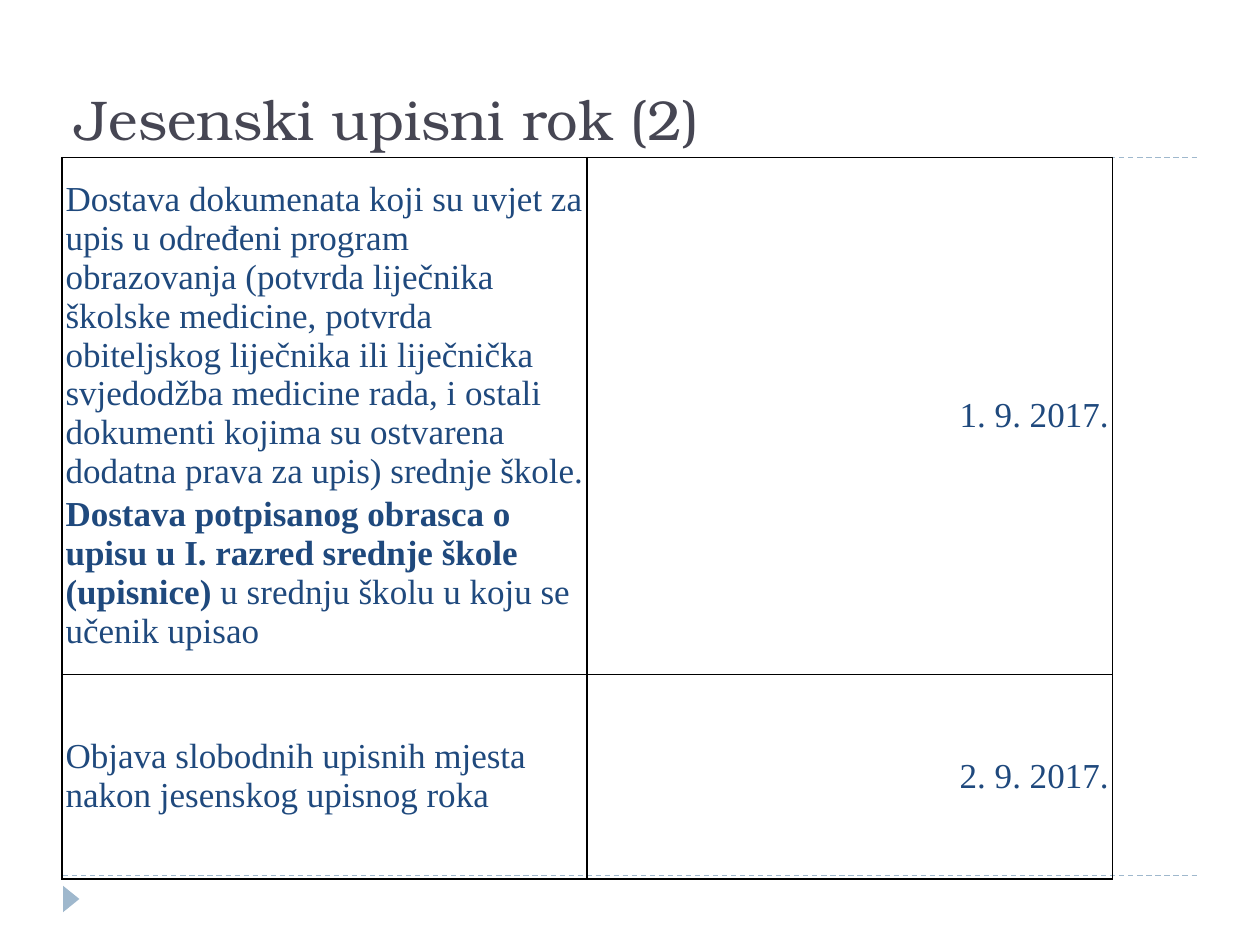
from pptx import Presentation
from pptx.dml.color import RGBColor
from pptx.enum.dml import MSO_LINE
from pptx.enum.shapes import MSO_CONNECTOR, MSO_SHAPE
from pptx.enum.text import MSO_ANCHOR, PP_ALIGN
from pptx.oxml import parse_xml
from pptx.oxml.ns import nsdecls
from pptx.oxml.xmlchemy import OxmlElement
from pptx.util import Inches, Pt

STRAIGHT = MSO_CONNECTOR.STRAIGHT
TRIANGLE = MSO_SHAPE.ISOSCELES_TRIANGLE
DASH = MSO_LINE.DASH
BOTTOM, MIDDLE = MSO_ANCHOR.BOTTOM, MSO_ANCHOR.MIDDLE
LEFT, RIGHT = PP_ALIGN.LEFT, PP_ALIGN.RIGHT

ACCENT = "9FB8CD"
TITLE_FORMAT = {"name": "TeX Gyre Bonum", "size": Pt(32), "bold": False}
TITLE_COLOR = "464653"
BODY_FORMAT = {"name": "Times New Roman", "size": Pt(20)}
BODY_COLOR = "1F497D"
CELL_FORMAT = {
    "vertical_anchor": MIDDLE,
    "margin_left": Inches(0.03),
    "margin_top": Inches(0.03),
    "margin_bottom": Inches(0.04),
}
# Alignment and right margin of each column; the text column needs the full width
COLUMN_FORMATS = ((LEFT, Inches(0.01)), (RIGHT, Inches(0.03)))


def color(hex_text):
    return RGBColor.from_string(hex_text)


def add_run(paragraph, text, run_format, hex_text):
    run = paragraph.add_run()
    run.text = text
    for name, value in run_format.items():
        setattr(run.font, name, value)
    run.font.color.rgb = color(hex_text)


presentation = Presentation()
presentation.slide_width = Inches(10)
presentation.slide_height = Inches(7.5)
slide = presentation.slides.add_slide(presentation.slide_layouts[6])

# Dashed rules and corner marker
for y in (6.95, 1.25):
    rule = slide.shapes.add_connector(
        STRAIGHT, Inches(0.5), Inches(y), Inches(9.5), Inches(y))
    rule.line.color.rgb = color(ACCENT)
    rule.line.width = Pt(0.75)
    rule.line.dash_style = DASH
    rule._element.spPr.append(OxmlElement("a:effectLst"))

marker = slide.shapes.add_shape(
    TRIANGLE, Inches(0.46), Inches(7.07), Inches(0.21), Inches(0.13))
marker.rotation = 90
marker.shadow.inherit = False
marker.fill.solid()
marker.fill.fore_color.rgb = color(ACCENT)
marker.line.fill.background()

# Title
title = slide.shapes.add_textbox(Inches(0.5), Inches(0.17), Inches(9), Inches(1.08))
title.text_frame.word_wrap = True
title.text_frame.vertical_anchor = BOTTOM
add_run(title.text_frame.paragraphs[0], "Jesenski upisni rok (2)",
        TITLE_FORMAT, TITLE_COLOR)

# Deadlines: each cell lists paragraphs, each paragraph lists (text, bold) runs
deadlines = [
    ([[("Dostava dokumenata koji su uvjet za upis u određeni program obrazovanja "
        "(potvrda liječnika školske medicine, potvrda obiteljskog liječnika ili "
        "liječnička svjedodžba medicine rada, i ostali dokumenti kojima su "
        "ostvarena dodatna prava za upis) srednje škole.", False)],
      [("Dostava potpisanog obrasca o upisu u I. razred srednje škole (upisnice) ", True),
       ("u srednju školu u koju se učenik upisao", False)]],
     [[("1. 9. 2017.", False)]]),
    ([[("Objava slobodnih upisnih mjesta nakon jesenskog upisnog roka", False)]],
     [[("2. 9. 2017.", False)]]),
]
row_heights = (4.1, 1.62)

table = slide.shapes.add_table(
    len(deadlines), 2, Inches(0.49), Inches(1.25),
    Inches(8.34), Inches(sum(row_heights))).table
table.first_row = False
table.horz_banding = False

for row, height, contents in zip(table.rows, row_heights, deadlines):
    row.height = Inches(height)
    for cell, paragraphs, (alignment, margin) in zip(row.cells, contents, COLUMN_FORMATS):
        for name, value in CELL_FORMAT.items():
            setattr(cell, name, value)
        cell.margin_right = margin
        properties = cell._tc.get_or_add_tcPr()
        for side in ("lnL", "lnR", "lnT", "lnB"):
            properties.append(parse_xml(
                f'<a:{side} {nsdecls("a")} w="{Pt(1)}"><a:solidFill>'
                f'<a:srgbClr val="000000"/></a:solidFill></a:{side}>'))
        cell.fill.background()
        frame = cell.text_frame
        for index, runs in enumerate(paragraphs):
            paragraph = frame.add_paragraph() if index else frame.paragraphs[0]
            paragraph.alignment = alignment
            if contents is deadlines[0] and index == 0:
                paragraph.space_after = Pt(2.4)
            for text, bold in runs:
                add_run(paragraph, text, {**BODY_FORMAT, "bold": bold}, BODY_COLOR)

presentation.save("out.pptx")
